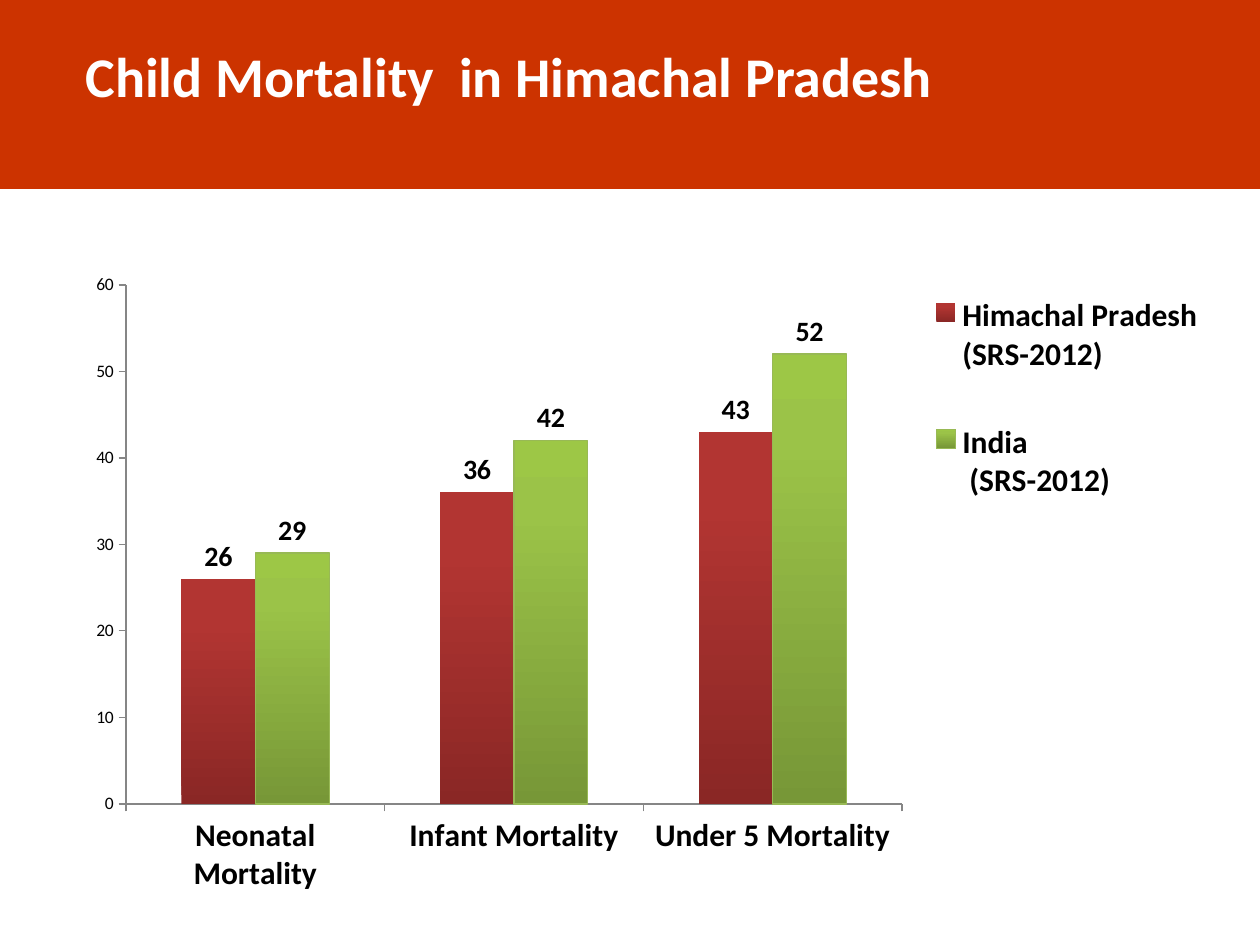
from lxml import etree
from pptx import Presentation
from pptx import util as u
from pptx.chart.data import CategoryChartData
from pptx.dml.color import RGBColor
from pptx.enum import chart as ch, shapes, text
from pptx.oxml import parse_xml
from pptx.oxml.ns import nsdecls

PX = 914400 / 126
FONT = "Calibri"
COLORS = {"band": "CC3300", "white": "FFFFFF", "text": "000000",
          "axis": "868686", "edge": "98B955"}
CATS = ["Neonatal Mortality", "Infant Mortality", "Under 5 Mortality"]
# name, values, gradient from the foot of the bar up, outline
SERIES = [
    ("Himachal Pradesh \n(SRS-2012)\n ", (26, 36, 43),
     ((0, "8A2725"), (80, "B23532"), (100, "B43532")), None),
    ("India\n (SRS-2012)", (29, 42, 52),
     ((0, "779737"), (80, "9BC348"), (100, "9DC746")), "edge"),
]


def emu(*vals):
    return [u.Emu(round(v * PX)) for v in vals]


def rgb(key):
    return RGBColor.from_string(COLORS[key])


def style(font, size, bold=False, color="text"):
    font.name, font.size, font.bold = FONT, u.Pt(size), bold
    font.color.rgb = rgb(color)


def shade(fmt, stops):
    """Give a bar format an upward gradient."""
    fmt.fill.solid()
    old = fmt.fill._xPr.find("{*}solidFill")
    gs = "".join(f'<a:gs pos="{p * 1000}"><a:srgbClr val="{c}"/></a:gs>'
                 for p, c in stops)
    new = parse_xml(f'<a:gradFill {nsdecls("a")} rotWithShape="1">'
                    f'<a:gsLst>{gs}</a:gsLst>'
                    '<a:lin ang="16200000" scaled="0"/></a:gradFill>')
    old.getparent().replace(old, new)


def layout(owner, outer, box, inner=False):
    """Fix the place of a chart part, as shares of the chart box."""
    for old in owner.findall("{*}layout"):
        owner.remove(old)
    x, y, w, h = outer
    left, top, wide, high = box
    parts = [("xMode", "edge"), ("yMode", "edge"),
             ("x", round(left / w, 4)), ("y", round(top / h, 4)),
             ("w", round(wide / w, 4)), ("h", round(high / h, 4))]
    if inner:
        parts.insert(0, ("layoutTarget", "inner"))
    body = "".join(f'<c:{k} val="{v}"/>' for k, v in parts)
    node = parse_xml(f'<c:layout {nsdecls("c")}><c:manualLayout>{body}'
                     '</c:manualLayout></c:layout>')
    prior = owner.find("{*}legendPos")
    if prior is None:
        owner.insert(0, node)
    else:
        prior.addnext(node)


def header(slide, box):
    x, y, w, h = box
    # Band
    band = slide.shapes.add_shape(shapes.MSO_SHAPE.RECTANGLE, *emu(*box))
    band.shadow.inherit = False
    band.fill.solid()
    band.fill.fore_color.rgb = rgb("band")
    band.line.fill.background()
    # Title
    frame = slide.shapes.add_textbox(*emu(x + 73, y + 35, 963, 118)).text_frame
    frame.word_wrap = True
    frame.text = "Child Mortality  in Himachal Pradesh"
    para = frame.paragraphs[0]
    para.alignment = text.PP_ALIGN.JUSTIFY
    style(para.runs[0].font, 32, True, "white")


def bars(slide, box):
    data = CategoryChartData(number_format="0")
    data.categories = CATS
    for name, vals, *_ in SERIES:
        data.add_series(name, vals)
    chart = slide.shapes.add_chart(
        ch.XL_CHART_TYPE.COLUMN_CLUSTERED, *emu(*box), data).chart
    style(chart.font, 10)
    chart.has_title = False

    # Columns and their labels
    plot = chart.plots[0]
    plot.gap_width, plot.overlap, plot.vary_by_categories = 150, 0, False
    for ser, (_, _, stops, edge) in zip(plot.series, SERIES):
        shade(ser.format, stops)
        if edge:
            ser.format.line.color.rgb = rgb(edge)
            ser.format.line.width = u.Pt(0.75)
        else:
            ser.format.line.fill.background()
        labels = ser.data_labels
        labels.show_value = True
        labels.position = ch.XL_LABEL_POSITION.OUTSIDE_END
        style(labels.font, 16, True)

    # Axes
    for axis, size, bold in ((chart.category_axis, 18, True),
                             (chart.value_axis, 10, False)):
        axis.has_major_gridlines = False
        axis.major_tick_mark = ch.XL_TICK_MARK.OUTSIDE
        axis.format.line.color.rgb = rgb("axis")
        style(axis.tick_labels.font, size, bold)
    value = chart.value_axis
    value.minimum_scale, value.maximum_scale, value.major_unit = 0, 60, 10

    # Legend
    chart.has_legend = True
    legend = chart.legend
    legend.position = ch.XL_LEGEND_POSITION.CORNER
    legend.include_in_layout = False
    style(legend.font, 18, True)

    layout(plot._element.getparent(), box, (53, 106, 776, 519), True)
    layout(legend._element, box, (855, 106, 285, 226))


def main():
    prs = Presentation()
    prs.slide_width, prs.slide_height = emu(1260, 945)
    slide = prs.slides.add_slide(prs.slide_layouts[6])
    header(slide, (0, 0, 1260, 189))
    bars(slide, (73, 179, 1152, 728))
    prs.save("out.pptx")


if __name__ == "__main__":
    main()
